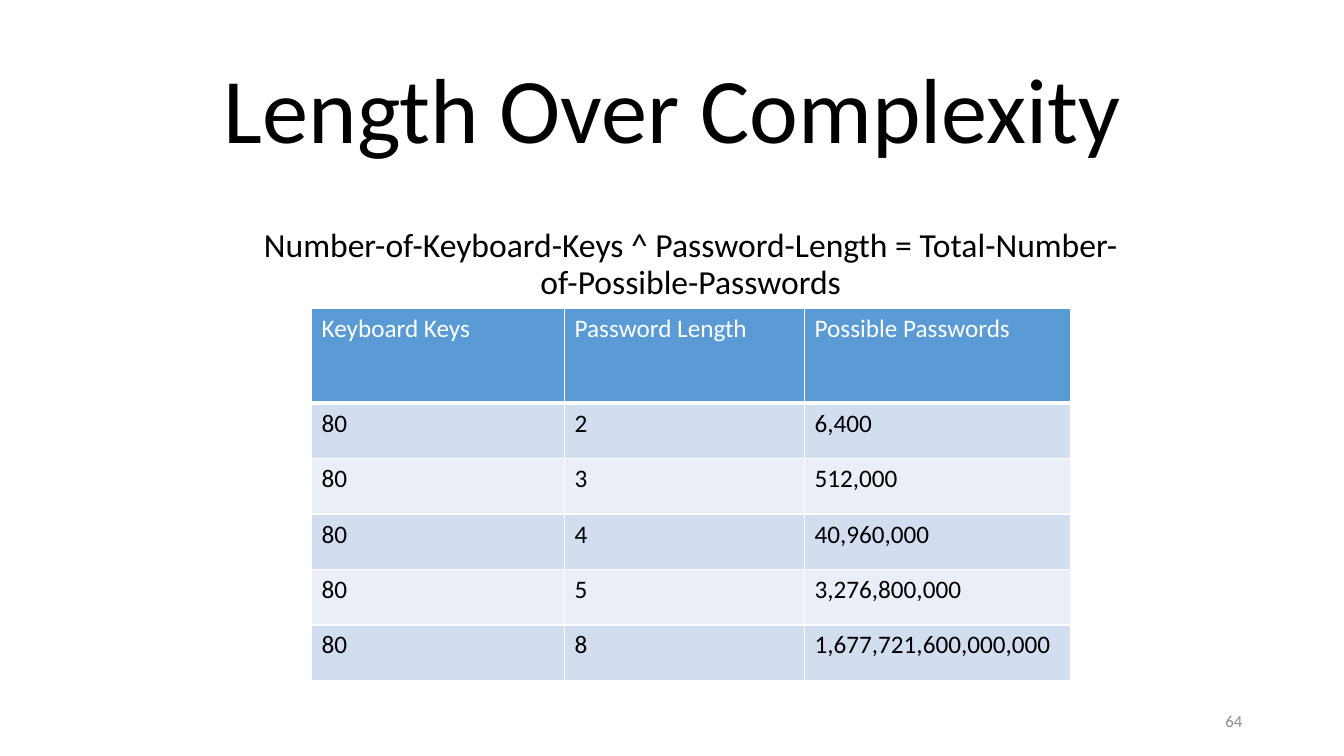
from lxml import etree
from pptx import Presentation
from pptx.dml.color import RGBColor
from pptx.enum.text import MSO_ANCHOR, MSO_AUTO_SIZE, PP_ALIGN
from pptx.oxml.ns import qn
from pptx.util import Inches, Pt

CENTER, LEFT, RIGHT = PP_ALIGN.CENTER, PP_ALIGN.LEFT, PP_ALIGN.RIGHT
TOP, MIDDLE = MSO_ANCHOR.TOP, MSO_ANCHOR.MIDDLE
NO_AUTOFIT = MSO_AUTO_SIZE.NONE
BLACK = RGBColor(0x00, 0x00, 0x00)
WHITE = RGBColor(0xFF, 0xFF, 0xFF)
GRAY = RGBColor(0x8C, 0x8C, 0x8C)
HEADER_BLUE = RGBColor(0x5B, 0x9B, 0xD5)
BANDS = (RGBColor(0xD2, 0xDE, 0xEF), RGBColor(0xEA, 0xEF, 0xF7))
FONT = "Calibri"

HEADINGS = ("Keyboard Keys", "Password Length", "Possible Passwords")
KEYBOARD_KEYS = 80
PASSWORD_LENGTHS = (2, 3, 4, 5, 8)
COLUMN_WIDTHS = (2.51, 2.38, 2.64)
HEADER_HEIGHT, ROW_HEIGHT = 0.94, 0.55


def write(frame, text, size, color, align):
    paragraph = frame.paragraphs[0]
    paragraph.alignment = align
    run = paragraph.add_run()
    run.text = text
    run.font.size = Pt(size)
    run.font.name = FONT
    run.font.bold = False
    run.font.color.rgb = color
    return paragraph


def place(region, box):
    region.left, region.top, region.width, region.height = map(Inches, box)


def fill_placeholder(placeholder, box, text, size, anchor):
    place(placeholder, box)
    frame = placeholder.text_frame
    frame.word_wrap = True
    frame.auto_size = NO_AUTOFIT
    frame.vertical_anchor = anchor
    paragraph = write(frame, text, size, BLACK, CENTER)
    paragraph.line_spacing = 0.9
    paragraph.space_before = Pt(0)
    return paragraph


def add_formula(placeholder, box, text):
    paragraph = fill_placeholder(placeholder, box, text, 24, TOP)
    properties = paragraph._p.get_or_add_pPr()
    properties.set("marL", "0")
    properties.set("indent", "0")
    etree.SubElement(properties, qn("a:buNone"))


def add_border(cell, side, width):
    line = etree.SubElement(cell._tc.get_or_add_tcPr(), qn(f"a:ln{side}"), w=str(Pt(width)))
    fill = etree.SubElement(line, qn("a:solidFill"))
    etree.SubElement(fill, qn("a:srgbClr"), val=str(WHITE))


def add_password_table(slide, box):
    rows = [HEADINGS] + [
        (str(KEYBOARD_KEYS), str(length), f"{KEYBOARD_KEYS ** length:,}")
        for length in PASSWORD_LENGTHS
    ]
    table = slide.shapes.add_table(len(rows), len(HEADINGS), *map(Inches, box)).table
    for column, width in zip(table.columns, COLUMN_WIDTHS):
        column.width = Inches(width)
    for r, values in enumerate(rows):
        is_header = r == 0
        table.rows[r].height = Inches(HEADER_HEIGHT if is_header else ROW_HEIGHT)
        for c, value in enumerate(values):
            cell = table.cell(r, c)
            for side in "LRTB":
                add_border(cell, side, 3 if is_header and side == "B" else 1)
            cell.fill.solid()
            cell.fill.fore_color.rgb = HEADER_BLUE if is_header else BANDS[(r - 1) % 2]
            write(cell.text_frame, value, 18, WHITE if is_header else BLACK, LEFT)


def add_page_number(slide, box, number):
    frame = slide.shapes.add_textbox(*map(Inches, box)).text_frame
    frame.word_wrap = True
    frame.vertical_anchor = MIDDLE
    write(frame, number, 12, GRAY, RIGHT)


def main():
    deck = Presentation()
    deck.slide_width, deck.slide_height = Inches(13.33), Inches(7.5)
    slide = deck.slides.add_slide(deck.slide_layouts[1])
    fill_placeholder(slide.shapes.title, (0.92, 0.4, 11.5, 1.45),
                     "Length Over Complexity", 66, MIDDLE)
    add_formula(slide.placeholders[1], (2.35, 2.22, 9, 3.68),
                "Number-of-Keyboard-Keys ^ Password-Length = "
                "Total-Number-of-Possible-Passwords")
    add_page_number(slide, (9.42, 6.95, 3, 0.4), "64")
    add_password_table(slide, (3.09, 3.06, 7.52, 3.67))
    deck.save("out.pptx")


if __name__ == "__main__":
    main()
